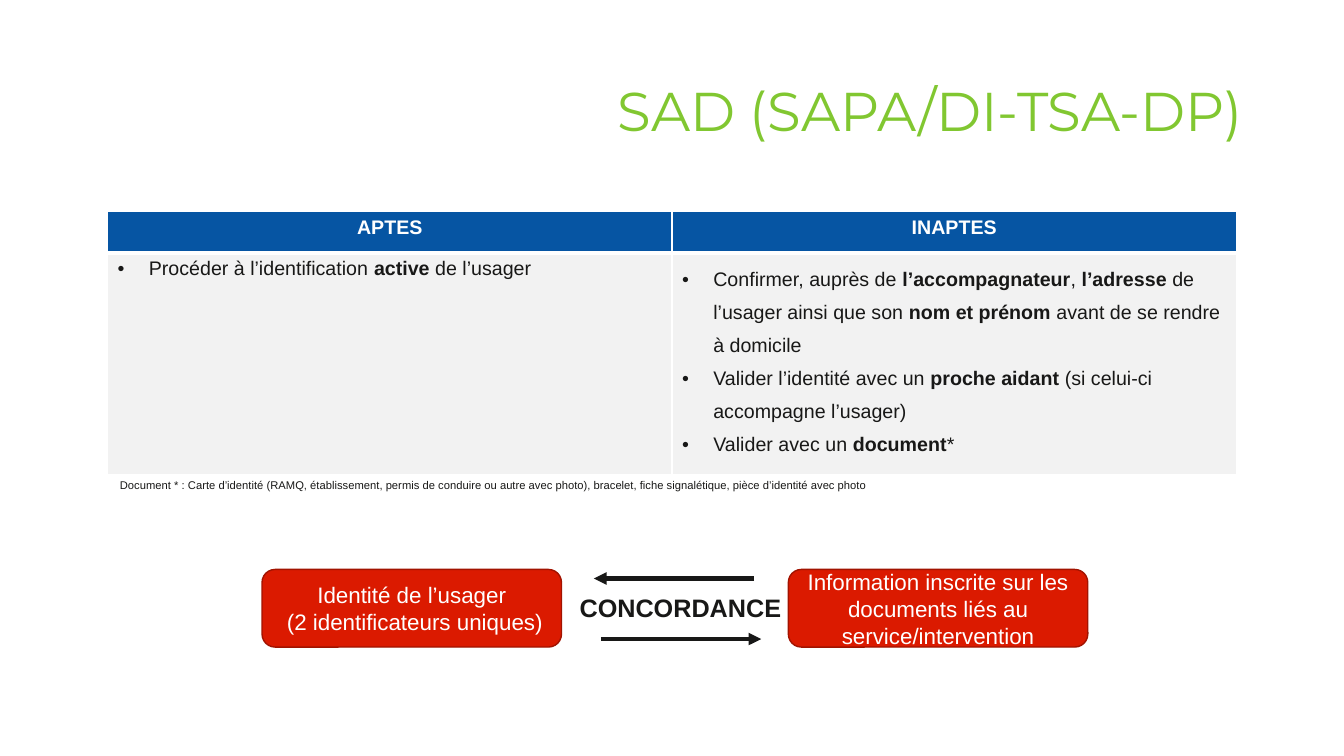
from lxml.etree import SubElement
from pptx import Presentation
from pptx.dml.color import RGBColor
from pptx.enum.shapes import MSO_CONNECTOR as Connector, MSO_SHAPE as Shape
from pptx.enum.text import MSO_ANCHOR as Anchor, PP_ALIGN as Align
from pptx.oxml.ns import qn
from pptx.util import Inches, Pt

COLORS = {"title": "81C731", "header": "0655A3", "body": "F2F2F2", "ink": "181817",
          "white": "FFFFFF", "red": "DB1A00", "outline": "A21300"}
RGB = {role: RGBColor.from_string(value) for role, value in COLORS.items()}

deck = Presentation()
deck.slide_width, deck.slide_height = Inches(13.33), Inches(7.5)
slide = deck.slides.add_slide(deck.slide_layouts[6])


def percent(*lengths):
    sides = (deck.slide_width, deck.slide_height) * 2
    return [int(side * length / 100) for side, length in zip(sides, lengths)]


def write(frame, lines, size, color, align=Align.LEFT, bold=False, face="Arial",
          spacing=None, bullet=False):
    for index, line in enumerate(lines):
        paragraph = frame.add_paragraph() if index else frame.paragraphs[0]
        paragraph.alignment = align
        if spacing:
            paragraph.line_spacing = spacing
        if bullet:
            properties = paragraph._p.get_or_add_pPr()
            properties.set("marL", str(Inches(0.31)))
            properties.set("indent", str(-Inches(0.31)))
            SubElement(properties, qn("a:buFont"), typeface="Arial")
            SubElement(properties, qn("a:buChar"), char="•")
        for part, words in enumerate(line.split("**")):
            if words:
                run = paragraph.add_run()
                run.text = words
                run.font.size, run.font.name = Pt(size), face
                run.font.bold = bold or part % 2 == 1
                run.font.color.rgb = RGB[color]


title = slide.shapes.add_textbox(*percent(14.55, 5.33, 78.62, 19.33)).text_frame
title.word_wrap = True
title.vertical_anchor = Anchor.MIDDLE
write(title, ["SAD (SAPA/DI-TSA-DP)"], 39, "title", Align.RIGHT, face="Montserrat", spacing=0.9)

for left, lines in [
    (19.5, ["Identité de l’usager", " (2 identificateurs uniques)"]),
    (58.66, ["Information inscrite sur les documents liés au service/intervention"]),
]:
    identity = slide.shapes.add_shape(Shape.ROUNDED_RECTANGLE, *percent(left, 75.33, 22.28, 10.27))
    identity.shadow.inherit = False
    identity.fill.solid()
    identity.fill.fore_color.rgb = RGB["red"]
    identity.line.color.rgb = RGB["outline"]
    identity.line.width = Pt(1)
    identity.text_frame.word_wrap = True
    identity.text_frame.vertical_anchor = Anchor.MIDDLE
    write(identity.text_frame, lines, 16, "white", Align.CENTER)

concordance = slide.shapes.add_textbox(*percent(42.39, 77.73, 16.58, 5.33)).text_frame
concordance.word_wrap = False
write(concordance, ["CONCORDANCE"], 18, "ink", bold=True)

for start, end, height in [(56.11, 44.19, 76.53), (44.71, 56.64, 84.53)]:
    arrow = slide.shapes.add_connector(Connector.STRAIGHT, *percent(start, height, end, height))
    arrow.line.color.rgb = RGB["ink"]
    arrow.line.width = Pt(3)
    SubElement(arrow.line._get_or_add_ln(), qn("a:tailEnd"), type="triangle")
    SubElement(arrow._element.spPr, qn("a:effectLst"))

rows = [
    [["APTES"], ["INAPTES"]],
    [["Procéder à l’identification **active** de l’usager"],
     ["Confirmer, auprès de **l’accompagnateur**, **l’adresse** de l’usager ainsi que son "
      "**nom et prénom **avant de se rendre à domicile",
      "Valider l’identité avec un **proche aidant** (si celui-ci accompagne l’usager)",
      "Valider avec un **document***"]],
]
table = slide.shapes.add_table(2, 2, *percent(8, 28, 84, 34.67)).table
table.rows[0].height, table.rows[1].height = Inches(0.41), Inches(2.19)
for row, contents in enumerate(rows):
    for column, lines in enumerate(contents):
        cell = table.cell(row, column)
        cell_properties = cell._tc.get_or_add_tcPr()
        for side in "LRTB":
            thick = (row, side) in [(0, "B"), (1, "T")]
            border = SubElement(cell_properties, qn(f"a:ln{side}"), w=str(Pt(3 if thick else 1)))
            border_fill = SubElement(border, qn("a:solidFill"))
            SubElement(border_fill, qn("a:srgbClr"), val=COLORS["white"])
        cell.fill.solid()
        cell.fill.fore_color.rgb = RGB["body" if row else "header"]
        if row:
            write(cell.text_frame, lines, 14, "ink", spacing=1.5 if column else None, bullet=True)
        else:
            write(cell.text_frame, lines, 14, "white", Align.CENTER, bold=True)

footnote = slide.shapes.add_textbox(*percent(7.95, 62.67, 84, 4.93)).text_frame
footnote.word_wrap = True
write(footnote, [" Document * : Carte d’identité (RAMQ, établissement, permis de conduire ou autre "
                 "avec photo), bracelet, fiche signalétique, pièce d’identité avec photo"], 8, "ink")

deck.save("out.pptx")
